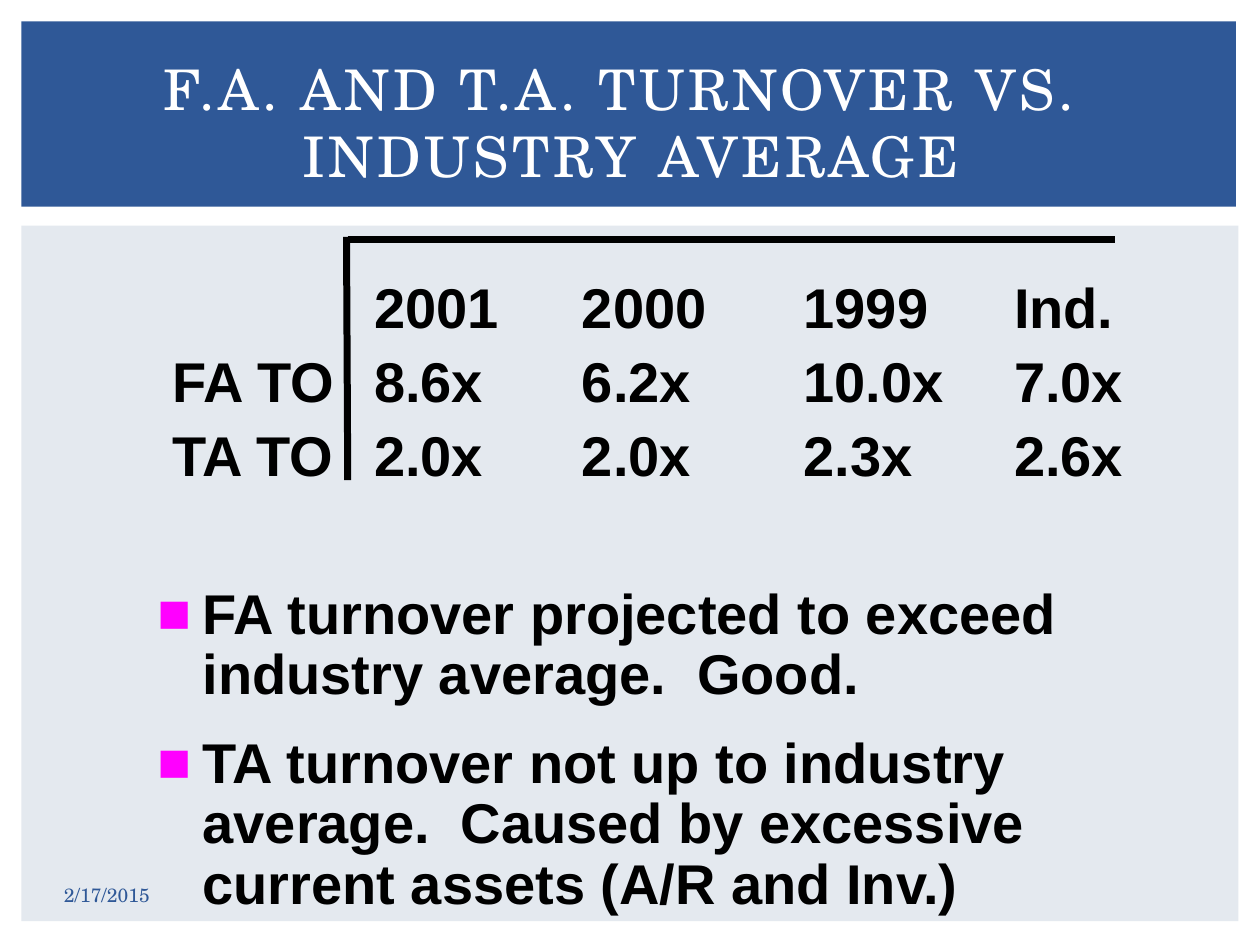
from lxml.etree import SubElement
from pptx import Presentation
from pptx.dml.color import RGBColor
from pptx.enum.shapes import MSO_CONNECTOR, MSO_SHAPE
from pptx.enum.text import MSO_ANCHOR, PP_ALIGN
from pptx.oxml.ns import qn
from pptx.util import Inches, Pt

COLORS = {"panel": "E4E9EF", "blue": "2F5897", "white": "FFFFFF",
          "black": "000000", "pink": "FF00FF"}
BODY = {"name": "Arial", "size": Pt(32), "bold": True}
TITLE = {"name": "TeX Gyre Schola", "size": Pt(32)}
DATE = {"name": "TeX Gyre Schola", "size": Pt(11)}
TABS = (1.6, 3.25, 5.01, 6.68)
ROWS = [
    ("", "2001", "2000", "1999", "Ind."),
    ("FA TO", "8.6x", "6.2x", "10.0x", "7.0x"),
    ("TA TO", "2.0x", "2.0x", "2.3x", "2.6x"),
]
POINTS = [
    "FA turnover projected to exceed industry average.  Good.",
    "TA turnover not up to industry average.  Caused by excessive "
    "current assets (A/R and Inv.)",
]


def rgb(color):
    return RGBColor.from_string(COLORS[color])


def add_band(slide, box, color):
    band = slide.shapes.add_shape(MSO_SHAPE.RECTANGLE, *map(Inches, box))
    band.shadow.inherit = False
    band.fill.solid()
    band.fill.fore_color.rgb = rgb(color)
    band.line.fill.background()


def add_rule(slide, *ends):
    rule = slide.shapes.add_connector(MSO_CONNECTOR.STRAIGHT,
                                      *map(Inches, ends))
    rule.line.color.rgb = rgb("black")
    rule.line.width = Pt(4)
    SubElement(rule._element.spPr, qn("a:effectLst"))


def add_text(slide, box, lines, style, color, anchor=MSO_ANCHOR.TOP):
    """Add a wrapped text box and return its paragraphs."""
    frame = slide.shapes.add_textbox(*map(Inches, box)).text_frame
    frame.word_wrap = True
    frame.vertical_anchor = anchor
    for i, line in enumerate(lines):
        para = frame.add_paragraph() if i else frame.paragraphs[0]
        para.text = line
        for run in para.runs:
            for key, value in style.items():
                setattr(run.font, key, value)
            run.font.color.rgb = rgb(color)
    return frame.paragraphs


def set_tabs(para):
    tabs = SubElement(para._p.get_or_add_pPr(), qn("a:tabLst"))
    for stop in TABS:
        SubElement(tabs, qn("a:tab"), pos=str(Inches(stop)), algn="l")


def set_bullet(para):
    props = para._p.get_or_add_pPr()
    props.set("marL", str(Inches(0.36)))
    props.set("indent", str(-Inches(0.36)))
    tint = SubElement(props, qn("a:buClr"))
    SubElement(tint, qn("a:srgbClr"), val=COLORS["pink"])
    SubElement(props, qn("a:buFont"), typeface="Arial")
    SubElement(props, qn("a:buChar"), char="■")


def add_title(slide):
    para, = add_text(slide, (0.42, 0.39, 9.17, 1.15),
                     ["F.A. AND T.A. TURNOVER VS. \vINDUSTRY AVERAGE"],
                     TITLE, "white", MSO_ANCHOR.MIDDLE)
    para.alignment = PP_ALIGN.CENTER
    for run in para.runs:
        run._r.get_or_add_rPr().set("spc", "200")


def add_ratios(slide):
    lines = ["\t".join(row) for row in ROWS]
    for para in add_text(slide, (1.27, 2.06, 8.15, 1.86), lines,
                         BODY, "black"):
        set_tabs(para)
        para.line_spacing = 1.1
    add_rule(slide, 2.76, 1.9, 8.85, 1.9)
    add_rule(slide, 2.75, 1.88, 2.76, 3.81)


def add_points(slide):
    paras = add_text(slide, (1.15, 4.6, 8.2, 2.75), POINTS, BODY, "black")
    for i, para in enumerate(paras):
        set_bullet(para)
        para.line_spacing = 0.9
        para.space_before = Pt(16 if i else 0)


def main():
    deck = Presentation()
    deck.slide_width, deck.slide_height = Inches(10), Inches(7.5)
    slide = deck.slides.add_slide(deck.slide_layouts[6])
    add_band(slide, (0.17, 1.79, 9.66, 5.52), "panel")
    add_band(slide, (0.17, 0.17, 9.64, 1.47), "blue")
    add_points(slide)
    add_ratios(slide)
    add_title(slide)
    add_text(slide, (0.41, 6.95, 2.33, 0.3), ["2/17/2015"], DATE, "blue",
             MSO_ANCHOR.MIDDLE)
    deck.save("out.pptx")


if __name__ == "__main__":
    main()
